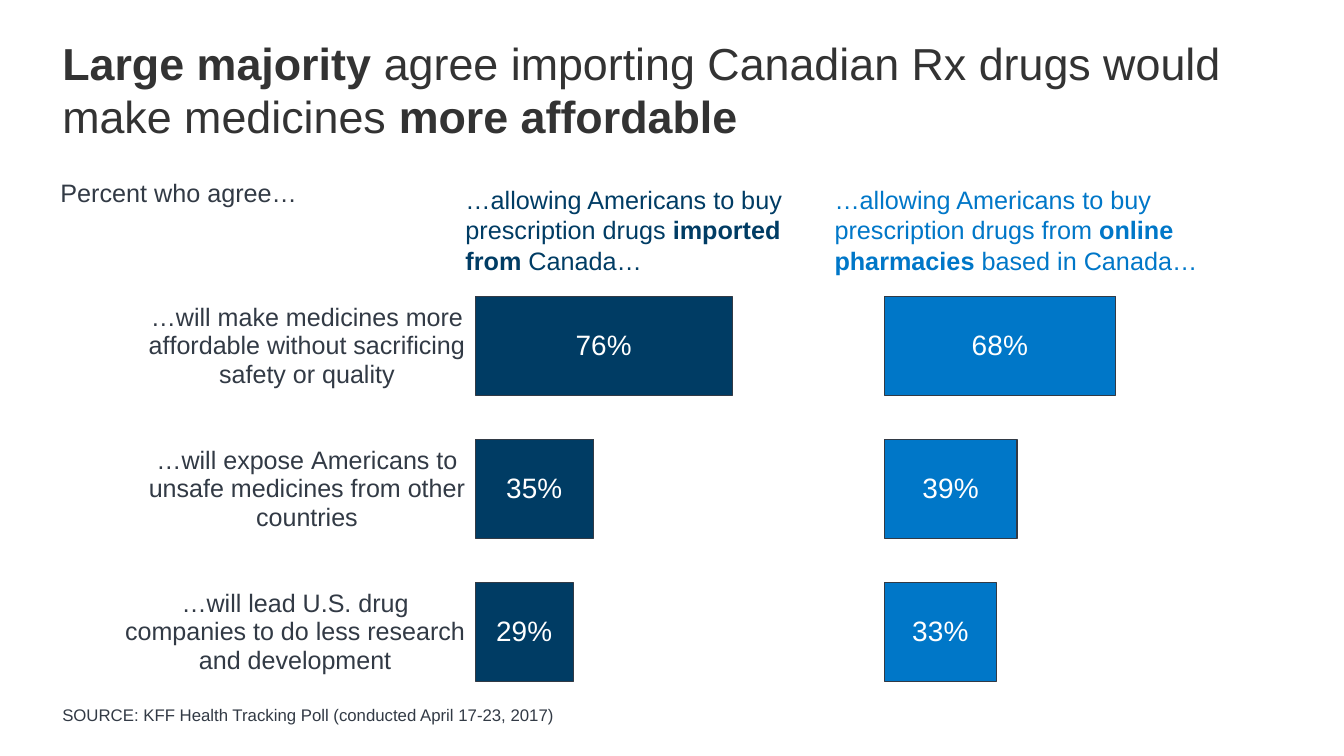
from dataclasses import dataclass

from lxml import etree
from pptx import Presentation
from pptx.chart.data import CategoryChartData
from pptx.dml.color import RGBColor
from pptx.enum.chart import XL_CHART_TYPE, XL_LABEL_POSITION, XL_TICK_LABEL_POSITION, XL_TICK_MARK
from pptx.enum.text import MSO_ANCHOR
from pptx.util import Pt

BAR_STACKED = XL_CHART_TYPE.BAR_STACKED
CENTER = XL_LABEL_POSITION.CENTER
NO_LABELS = XL_TICK_LABEL_POSITION.NONE
TICK_NONE, TICK_OUT = XL_TICK_MARK.NONE, XL_TICK_MARK.OUTSIDE
TOP, BOTTOM = MSO_ANCHOR.TOP, MSO_ANCHOR.BOTTOM

FONT = "Arial"
COLORS = {
    "title": "333333",
    "body": "323A45",
    "imported": "003C64",
    "online": "0077C8",
    "white": "FFFFFF",
}


@dataclass(frozen=True)
class TextBlock:
    """Text runs, with bold stretches between asterisks."""
    text: str
    left: float
    top: float
    width: float
    height: float
    size: float
    color: str
    anchor: MSO_ANCHOR = TOP
    inset_top: float = 3.6


@dataclass(frozen=True)
class AgreementChart:
    left: float
    plot_x: float
    values: tuple[float, ...]
    color: str
    show_statements: bool


STATEMENTS = (
    "…will make medicines more affordable without sacrificing safety or quality",
    "…will expose Americans to unsafe medicines from other countries",
    "…will lead U.S. drug companies to do less research and development",
)
CHARTS = (
    AgreementChart(380.2, 0.433, (0.68, 0.39, 0.33), "online", False),
    AgreementChart(89.3, 0.428, (0.76, 0.35, 0.29), "imported", True),
)
TEXTS = (
    TextBlock("*Large majority *agree importing Canadian Rx drugs would make medicines "
              "*more affordable*", 37.4, 18, 886.3, 72, 32, "title", inset_top=7.2),
    TextBlock("SOURCE: KFF Health Tracking Poll (conducted April 17-23, 2017)",
              37.4, 478.1, 646.6, 43.2, 12, "body", BOTTOM),
    TextBlock("Percent who agree…", 36, 123.1, 738, 28.8, 18, "body"),
    TextBlock("…allowing Americans to buy prescription drugs *imported from *Canada…",
              325.4, 128.2, 248.4, 72.7, 18, "imported"),
    TextBlock("…allowing Americans to buy prescription drugs from *online pharmacies *"
              "based in Canada…", 589, 128.2, 293.8, 72.7, 18, "online"),
)


def rgb(name: str) -> RGBColor:
    return RGBColor.from_string(COLORS[name])


def style_font(font, size: float, color: str, bold: bool = False) -> None:
    formats = {"name": FONT, "size": Pt(size), "bold": bold}
    for attribute, value in formats.items():
        setattr(font, attribute, value)
    font.color.rgb = rgb(color)


def add_text(slide, block: TextBlock) -> None:
    box = slide.shapes.add_textbox(
        Pt(block.left), Pt(block.top), Pt(block.width), Pt(block.height))
    frame = box.text_frame
    formats = {"word_wrap": True, "vertical_anchor": block.anchor,
               "margin_top": Pt(block.inset_top)}
    for attribute, value in formats.items():
        setattr(frame, attribute, value)
    for index, part in enumerate(block.text.split("*")):
        if part:
            run = frame.paragraphs[0].add_run()
            run.text = part
            style_font(run.font, block.size, block.color, bold=index % 2 == 1)


def set_inner_plot_layout(chart, x: float, y: float, width: float, height: float) -> None:
    plot_area = chart.plots[0]._element.getparent()
    namespace = etree.QName(plot_area).namespace
    for old_layout in plot_area.findall(f"{{{namespace}}}layout"):
        plot_area.remove(old_layout)
    layout = etree.Element(f"{{{namespace}}}layout")
    manual = etree.SubElement(layout, f"{{{namespace}}}manualLayout")
    settings = {"layoutTarget": "inner", "xMode": "edge", "yMode": "edge",
                "x": x, "y": y, "w": width, "h": height}
    for tag, value in settings.items():
        etree.SubElement(manual, f"{{{namespace}}}{tag}").set("val", str(value))
    plot_area.insert(0, layout)


def add_agreement_chart(slide, spec: AgreementChart) -> None:
    data = CategoryChartData(number_format="0%")
    data.categories = STATEMENTS if spec.show_statements else ("1", "2", "3")
    data.add_series("Series 1", spec.values)
    chart = slide.shapes.add_chart(
        BAR_STACKED, Pt(spec.left), Pt(89.3), Pt(581), Pt(413.3), data).chart
    chart.has_legend = False
    chart.has_title = False
    style_font(chart.font, 13, "title")
    set_inner_plot_layout(chart, spec.plot_x, 0.258, 0.439, 0.742)

    share_axis = chart.value_axis
    share_formats = {"visible": False, "minimum_scale": 0, "maximum_scale": 1.05,
                     "has_major_gridlines": False, "major_tick_mark": TICK_NONE,
                     "tick_label_position": NO_LABELS}
    for attribute, value in share_formats.items():
        setattr(share_axis, attribute, value)

    statement_axis = chart.category_axis
    statement_formats = {"visible": spec.show_statements, "reverse_order": True,
                         "major_tick_mark": TICK_OUT}
    for attribute, value in statement_formats.items():
        setattr(statement_axis, attribute, value)
    statement_axis.format.line.fill.background()
    style_font(statement_axis.tick_labels.font, 18, "body")

    plot = chart.plots[0]
    plot_formats = {"gap_width": 45, "overlap": 100, "vary_by_categories": False,
                    "has_data_labels": True}
    for attribute, value in plot_formats.items():
        setattr(plot, attribute, value)
    labels = plot.data_labels
    label_formats = {"show_value": True, "position": CENTER, "number_format": "0%",
                     "number_format_is_linked": False}
    for attribute, value in label_formats.items():
        setattr(labels, attribute, value)
    style_font(labels.font, 20, "white")

    bars = plot.series[0].format
    bars.fill.solid()
    bars.fill.fore_color.rgb = rgb(spec.color)
    bars.line.color.rgb = rgb("body")
    bars.line.width = Pt(0.75)


def main() -> None:
    deck = Presentation()
    deck.slide_width, deck.slide_height = Pt(960), Pt(540)
    slide = deck.slides.add_slide(deck.slide_layouts[6])
    for spec in CHARTS:
        add_agreement_chart(slide, spec)
    for block in TEXTS:
        add_text(slide, block)
    deck.save("out.pptx")


if __name__ == "__main__":
    main()
